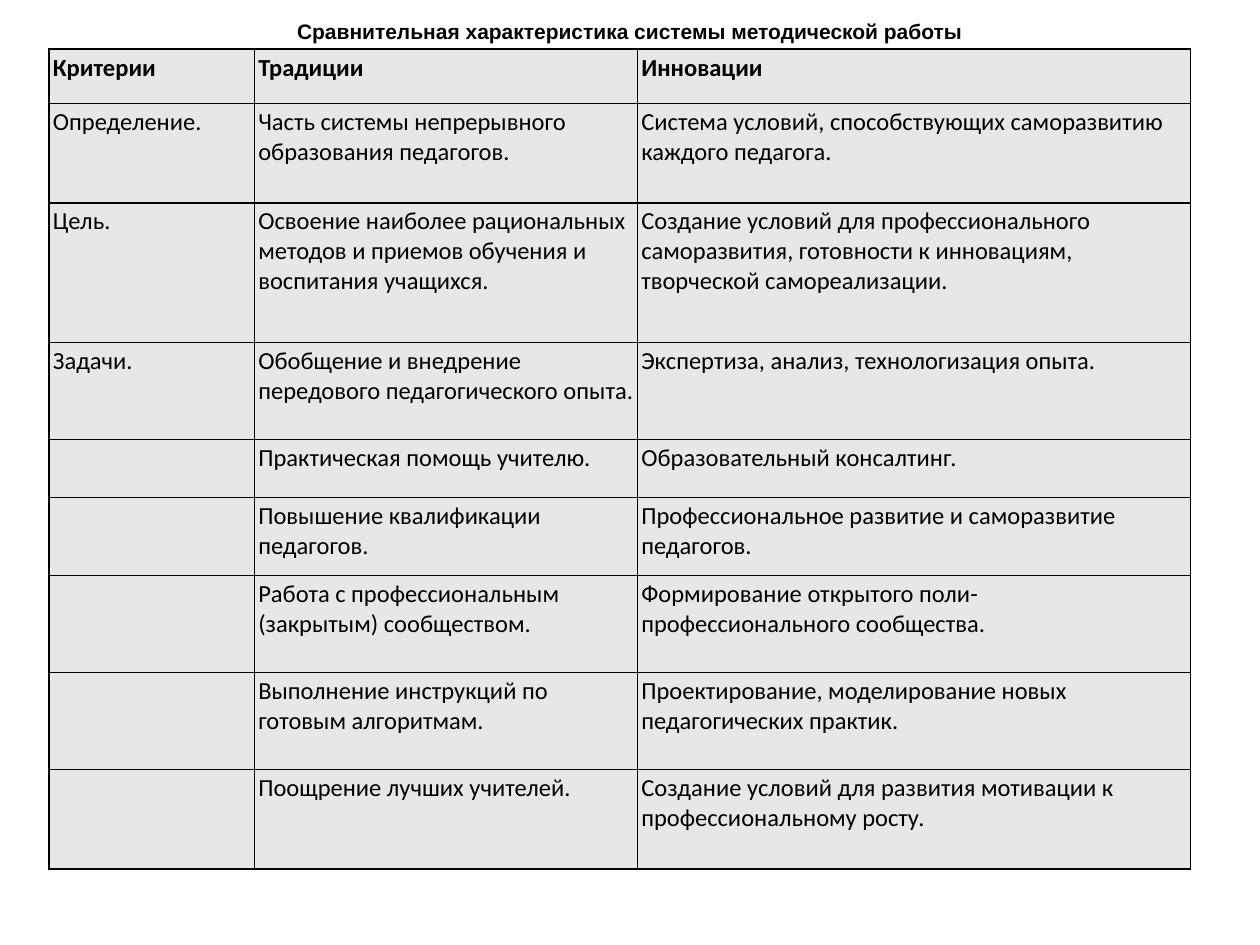
from lxml.etree import SubElement
from pptx import Presentation
from pptx.dml.color import RGBColor
from pptx.enum.text import MSO_ANCHOR, MSO_AUTO_SIZE, PP_ALIGN
from pptx.oxml.ns import qn
from pptx.util import Inches, Pt

TITLE = "Сравнительная характеристика системы методической работы"
COLUMN_WIDTHS = [1.63, 3.04, 4.39]
ROWS = [  # height, then criterion, tradition, innovation
    (0.43, "Критерии", "Традиции", "Инновации"),
    (0.79, "Определение.", "Часть системы непрерывного образования педагогов.",
     "Система условий, способствующих саморазвитию каждого педагога."),
    (1.11, "Цель.",
     "Освоение наиболее рациональных методов и приемов обучения и воспитания учащихся.",
     "Создание условий для профессионального саморазвития, готовности к инновациям, "
     "творческой самореализации."),
    (0.77, "Задачи.", "Обобщение и внедрение передового педагогического опыта.",
     "Экспертиза, анализ, технологизация опыта."),
    (0.46, "", "Практическая помощь учителю.", "Образовательный консалтинг."),
    (0.62, "", "Повышение квалификации педагогов.",
     "Профессиональное развитие и саморазвитие педагогов."),
    (0.77, "", "Работа с профессиональным (закрытым) сообществом.",
     "Формирование открытого поли-профессионального сообщества."),
    (0.77, "", "Выполнение инструкций по готовым алгоритмам.",
     "Проектирование, моделирование новых педагогических практик."),
    (0.79, "", "Поощрение лучших учителей.",
     "Создание условий для развития мотивации к профессиональному росту."),
]


def color(value):
    return RGBColor.from_string(value)


class SlideBuilder:
    ink = "000000"
    cell_fill = "E7E7E7"
    border_width = Pt(1)
    cell_margin = Inches(0.03)

    def __init__(self, slide):
        self.slide = slide

    def set_font(self, paragraph, name, size, bold):
        font = paragraph.font
        font.name, font.size, font.bold = name, Pt(size), bold
        font.color.rgb = color(self.ink)

    def title(self, text, left, top, width, height):
        shape = self.slide.shapes.title
        shape.left, shape.top = Inches(left), Inches(top)
        shape.width, shape.height = Inches(width), Inches(height)
        frame = shape.text_frame
        frame.text = text
        frame.word_wrap = False
        frame.auto_size = MSO_AUTO_SIZE.NONE
        frame.vertical_anchor = MSO_ANCHOR.MIDDLE
        paragraph = frame.paragraphs[0]
        paragraph.alignment = PP_ALIGN.CENTER
        self.set_font(paragraph, "Arial", 12, True)

    def table(self, left, top, column_widths, rows):
        height = sum(row[0] for row in rows)
        table = self.slide.shapes.add_table(
            len(rows), len(column_widths), Inches(left), Inches(top),
            Inches(sum(column_widths)), Inches(height)).table
        table.horz_banding = False
        for column, width in zip(table.columns, column_widths):
            column.width = Inches(width)
        for row_index, (row_height, *texts) in enumerate(rows):
            table.rows[row_index].height = Inches(row_height)
            for cell, text in zip(table.rows[row_index].cells, texts):
                self.cell(cell, text, bold=row_index == 0)

    def cell(self, cell, text, bold):
        cell.margin_left = cell.margin_right = self.cell_margin
        cell.margin_top = cell.margin_bottom = self.cell_margin
        if text:
            cell.text = text
        self.set_font(cell.text_frame.paragraphs[0], "Calibri", 14, bold)
        # Borders come before the fill in the cell properties
        properties = cell._tc.get_or_add_tcPr()
        for side in ("a:lnL", "a:lnR", "a:lnT", "a:lnB"):
            line = SubElement(properties, qn(side), w=str(self.border_width))
            fill = SubElement(line, qn("a:solidFill"))
            SubElement(fill, qn("a:srgbClr"), val=self.ink)
        cell.fill.solid()
        cell.fill.fore_color.rgb = color(self.cell_fill)


def main():
    presentation = Presentation()
    presentation.slide_width, presentation.slide_height = Inches(10), Inches(7.5)
    title_only = presentation.slide_layouts[5]
    builder = SlideBuilder(presentation.slides.add_slide(title_only))

    # Heading
    builder.title(TITLE, 0, 0, 10, 0.5)

    # Comparison table
    builder.table(0.39, 0.39, COLUMN_WIDTHS, ROWS)

    presentation.save("out.pptx")


if __name__ == "__main__":
    main()
